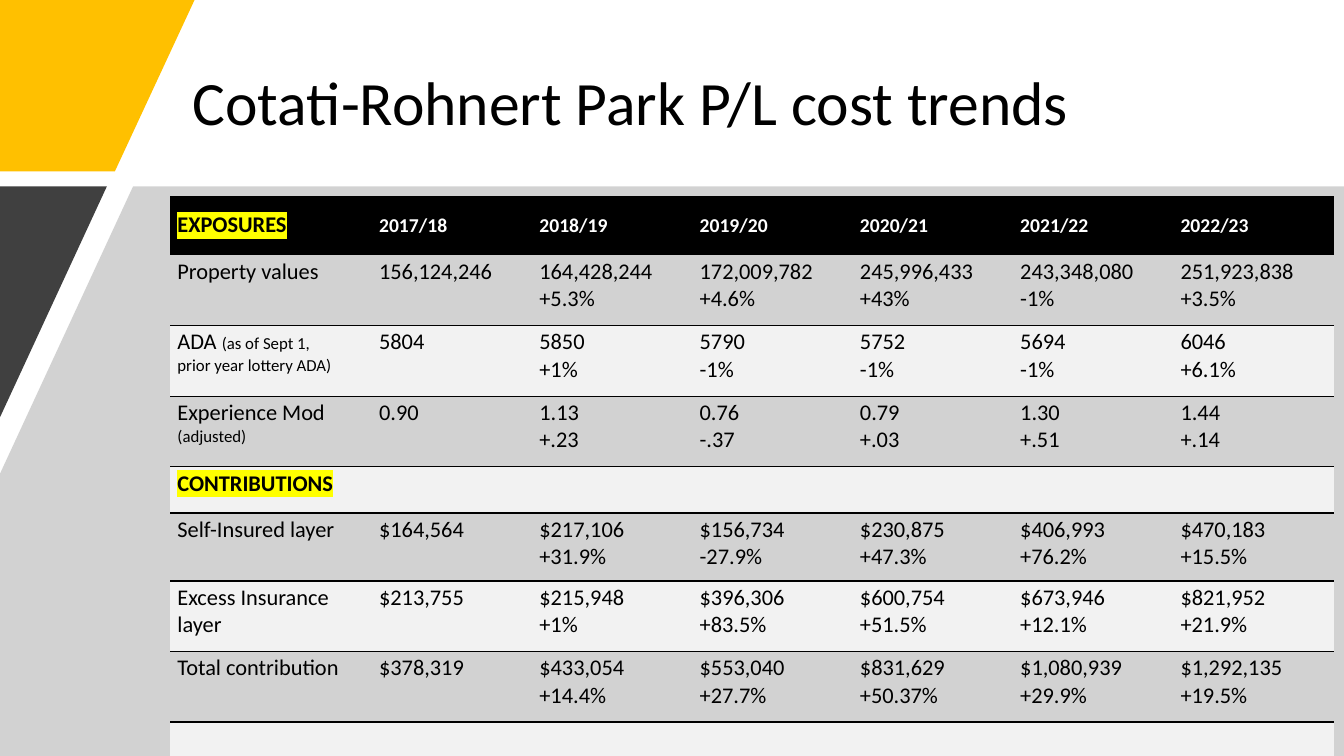
from dataclasses import dataclass

from lxml import etree
from pptx import Presentation
from pptx.dml.color import RGBColor
from pptx.enum.text import MSO_ANCHOR, PP_ALIGN
from pptx.oxml.ns import qn
from pptx.util import Inches, Pt

MIDDLE, TOP = MSO_ANCHOR.MIDDLE, MSO_ANCHOR.TOP
LEFT = PP_ALIGN.LEFT
PLAIN_TABLE = "{2D5ABB26-0587-4C30-8999-92F81FD0307C}"


@dataclass
class Theme:
    font: str = "Calibri"
    black: str = "000000"
    white: str = "FFFFFF"
    gold: str = "FFC000"
    charcoal: str = "404040"
    grey: str = "A6A6A6"
    light: str = "F2F2F2"
    marker: str = "FFFF00"
    title: int = 44
    body: int = 16
    year: int = 14
    note: int = 12


YEARS = ["2017/18", "2018/19", "2019/20", "2020/21", "2021/22", "2022/23"]
# A label part in parentheses is set in the small note size.
ROWS = [
    [[["Property values"]], "156,124,246", "164,428,244\n+5.3%", "172,009,782\n+4.6%",
     "245,996,433\n+43%", "243,348,080\n-1%", "251,923,838\n+3.5%"],
    [[["ADA ", "(as of Sept 1,"], ["prior year lottery ADA)"]], "5804", "5850\n+1%",
     "5790\n-1%", "5752\n-1%", "5694\n-1%", "6046\n+6.1%"],
    [[["Experience Mod ", "(adjusted)"]], "0.90", "1.13\n+.23", "0.76\n-.37",
     "0.79\n+.03", "1.30\n+.51", "1.44\n+.14"],
    [[["CONTRIBUTIONS"]]],
    [[["Self-Insured layer"]], "$164,564", "$217,106\n+31.9%", "$156,734\n-27.9%",
     "$230,875\n+47.3%", "$406,993\n+76.2%", "$470,183\n+15.5%"],
    [[["Excess Insurance layer"]], "$213,755", "$215,948\n+1%", "$396,306\n+83.5%",
     "$600,754\n+51.5%", "$673,946\n+12.1%", "$821,952\n+21.9%"],
    [[["Total contribution"]], "$378,319", "$433,054\n+14.4%", "$553,040\n+27.7%",
     "$831,629\n+50.37%", "$1,080,939\n+29.9%", "$1,292,135\n+19.5%"],
    [],
]
COL_WIDTHS = [2] + [1.59] * len(YEARS)
ROW_HEIGHTS = [0.59, 0.7, 0.7, 0.7, 0.46, 0.46, 0.7, 0.7, 0.48]


def add_run(p, text, *, font, size, color, bold=False, highlight=None):
    r = p.add_run()
    r.text = text
    r.font.size = Pt(size)
    r.font.bold = bold
    r.font.color.rgb = RGBColor.from_string(color)
    if highlight:
        mark = etree.SubElement(r._r.get_or_add_rPr(), qn("a:highlight"))
        etree.SubElement(mark, qn("a:srgbClr"), val=highlight)
    r.font.name = font


def add_top_border(cell, color):
    ln = etree.Element(qn("a:lnT"), w=str(Pt(1)))
    fill = etree.SubElement(ln, qn("a:solidFill"))
    etree.SubElement(fill, qn("a:srgbClr"), val=color)
    cell._tc.get_or_add_tcPr().insert(0, ln)


class SlideBuilder:
    def __init__(self, prs, theme):
        self.theme = theme
        self.slide = prs.slides.add_slide(prs.slide_layouts[5])

    def title(self, text, left, top, width, height):
        sp = self.slide.shapes.title
        sp.left, sp.top = Inches(left), Inches(top)
        sp.width, sp.height = Inches(width), Inches(height)
        tf = sp.text_frame
        tf.vertical_anchor = MIDDLE
        p = tf.paragraphs[0]
        p.alignment = LEFT
        p.line_spacing = 0.9
        add_run(p, text, font=self.theme.font, size=self.theme.title, color=self.theme.black)

    def polygon(self, points, color, opacity=100):
        start, *rest = [(Inches(x), Inches(y)) for x, y in points]
        builder = self.slide.shapes.build_freeform(*start)
        builder.add_line_segments(rest, close=True)
        sp = builder.convert_to_shape()
        sp.shadow.inherit = False
        sp.line.fill.background()
        sp.fill.solid()
        sp.fill.fore_color.rgb = RGBColor.from_string(color)
        if opacity < 100:
            clr = sp._element.spPr.find(f"{qn('a:solidFill')}/{qn('a:srgbClr')}")
            etree.SubElement(clr, qn("a:alpha"), val=str(opacity * 1000))

    def cell(self, cell, paragraphs, *, fill=None, anchor=TOP, top=0.03, **style):
        """Fill one cell from a list of paragraphs, each a list of run texts."""
        cell.margin_left, cell.margin_right = Inches(0.07), Inches(0.05)
        cell.margin_top, cell.margin_bottom = Inches(top), Inches(0.1)
        cell.vertical_anchor = anchor
        if fill:
            cell.fill.solid()
            cell.fill.fore_color.rgb = RGBColor.from_string(fill)
        else:
            cell.fill.background()
        style = {"font": self.theme.font, "size": self.theme.body,
                 "color": self.theme.black, **style}
        tf = cell.text_frame
        for i, runs in enumerate(paragraphs):
            p = tf.add_paragraph() if i else tf.paragraphs[0]
            for text in runs:
                size = self.theme.note if text.startswith("(") or text.endswith(")") else style["size"]
                add_run(p, text, **{**style, "size": size})

    def table(self, left, top):
        t = self.theme
        frame = self.slide.shapes.add_table(
            len(ROW_HEIGHTS), len(COL_WIDTHS), Inches(left), Inches(top),
            Inches(sum(COL_WIDTHS)), Inches(sum(ROW_HEIGHTS)))
        table = frame.table
        table.horz_banding = False
        table._tbl.tblPr.find(qn("a:tableStyleId")).text = PLAIN_TABLE
        for column, width in zip(table.columns, COL_WIDTHS):
            column.width = Inches(width)
        for row, height in zip(table.rows, ROW_HEIGHTS):
            row.height = Inches(height)

        section = {"bold": True, "highlight": t.marker}
        header = {"fill": t.black, "anchor": MIDDLE, "top": 0.1}
        self.cell(table.cell(0, 0), [["EXPOSURES"]], **header, **section)
        for c, year in enumerate(YEARS, 1):
            self.cell(table.cell(0, c), [[year]], **header,
                      size=t.year, color=t.white, bold=True)

        for r, row in enumerate(ROWS, 1):
            is_light = r % 2 == 0
            is_section = len(row) == 1
            for c in range(len(COL_WIDTHS)):
                cell = table.cell(r, c)
                value = row[c] if c < len(row) else []
                if isinstance(value, str):
                    value = [[line] for line in value.split("\n")]
                self.cell(cell, value, fill=t.light if is_light else None,
                          **(section if is_section else {}))
                if is_light:
                    add_top_border(cell, t.black)
            if is_section:
                table.cell(r, 0).merge(table.cell(r, len(COL_WIDTHS) - 1))


def main():
    prs = Presentation()
    prs.slide_width, prs.slide_height = Inches(13.33), Inches(7.5)
    theme = Theme()
    s = SlideBuilder(prs, theme)
    s.polygon([(0, 0), (1.93, 0), (1.14, 1.7), (0, 1.7)], theme.gold)
    s.title("Cotati-Rohnert Park P/L cost trends", 1.81, 0.4, 10.24, 1.3)
    s.polygon([(1.32, 1.85), (13.33, 1.85), (13.33, 7.5), (0, 7.5), (0, 4.7)],
              theme.grey, opacity=50)
    s.polygon([(0, 1.85), (1.06, 1.85), (0, 4.14)], theme.charcoal)
    s.table(1.69, 1.94)
    prs.save("out.pptx")


if __name__ == "__main__":
    main()
